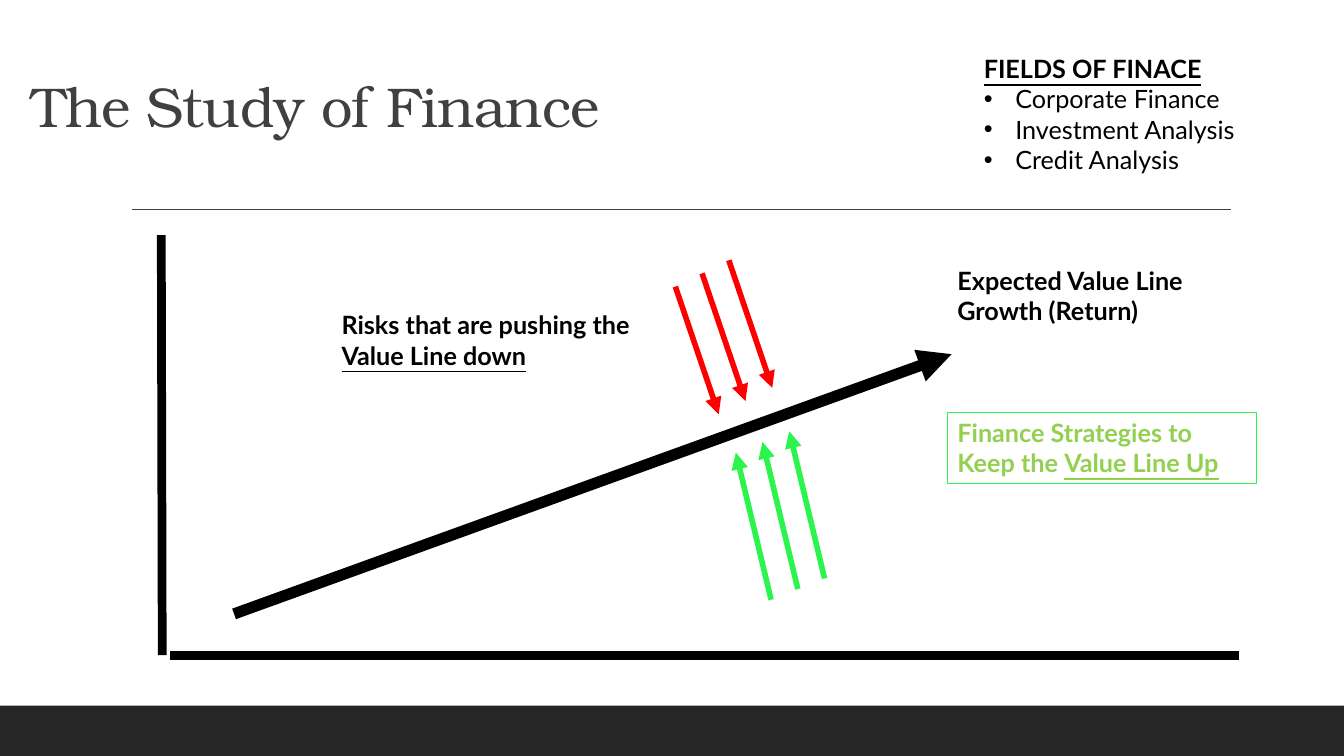
from lxml import etree
from pptx import Presentation
from pptx.dml.color import RGBColor
from pptx.enum.shapes import MSO_CONNECTOR, MSO_SHAPE
from pptx.enum.text import MSO_ANCHOR, MSO_AUTO_SIZE, PP_ALIGN
from pptx.oxml.ns import qn
from pptx.util import Pt

STRAIGHT = MSO_CONNECTOR.STRAIGHT
RECT = MSO_SHAPE.RECTANGLE
TOP, BOTTOM = MSO_ANCHOR.TOP, MSO_ANCHOR.BOTTOM
LEFT = PP_ALIGN.LEFT
NO_FIT = MSO_AUTO_SIZE.NONE

BLACK = RGBColor(0, 0, 0)
DARK = RGBColor(0x26, 0x26, 0x26)
GREY = RGBColor(0x40, 0x40, 0x40)
RED = RGBColor(0xFF, 0, 0)
GREEN = RGBColor(0x2B, 0xF5, 0x4D)
LIME = RGBColor(0x92, 0xD0, 0x50)

HEAD = {"name": "TeX Gyre Bonum", "size": Pt(40), "bold": False}
BODY = {"name": "Lato", "size": Pt(18), "bold": False}
BOLD = {**BODY, "bold": True}
UNDER = {**BOLD, "underline": True}
FRAME = {"word_wrap": True, "auto_size": NO_FIT, "vertical_anchor": TOP}


def apply(item, values):
    for name, value in values.items():
        setattr(item, name, value)


def place(shape, box):
    names = ("left", "top", "width", "height")
    apply(shape, {name: Pt(size) for name, size in zip(names, box)})


def add_run(para, text, style, color):
    run = para.add_run()
    run.text = text
    apply(run.font, style)
    run.font.color.rgb = color
    return run


def add_line(slide, start, end, color, width, arrow=False):
    line = slide.shapes.add_connector(STRAIGHT, *map(Pt, start + end))
    line.line.color.rgb = color
    line.line.width = Pt(width)
    if arrow:
        tail = etree.SubElement(line.line._get_or_add_ln(), qn("a:tailEnd"))
        tail.set("type", "triangle")
    etree.SubElement(line._element.spPr, qn("a:effectLst"))


def add_label(slide, box, parts, color, edge=None):
    label = slide.shapes.add_textbox(*map(Pt, box))
    apply(label.text_frame, FRAME)
    if edge:
        label.line.color.rgb = edge
        label.line.width = Pt(0.75)
    for text, style in parts:
        add_run(label.text_frame.paragraphs[0], text, style, color)


def add_base(slide, box):
    """Footer band and rule under the heading."""
    x, y, w, h = box
    band = slide.shapes.add_shape(RECT, Pt(x), Pt(y + h - 36), Pt(w), Pt(36))
    band.shadow.inherit = False
    band.fill.solid()
    band.fill.fore_color.rgb = DARK
    band.line.fill.background()
    add_line(slide, (x + 94.3, y + 149.5), (x + 879, y + 149.5), GREY, 1)


def add_title(slide, box):
    title = slide.shapes.title
    place(title, box)
    apply(title.text_frame, {**FRAME, "vertical_anchor": BOTTOM})
    para = title.text_frame.paragraphs[0]
    apply(para, {"alignment": LEFT, "line_spacing": 0.9})
    run = add_run(para, "The Study of Finance", HEAD, GREY)
    run.font._element.set("spc", "-50")


def add_fields(slide, box):
    """Underlined heading with a bulleted list."""
    body = slide.placeholders[1]
    place(body, box)
    frame = body.text_frame
    apply(frame, FRAME)
    rows = ("FIELDS OF FINACE", "Corporate Finance",
            "Investment Analysis", "Credit Analysis")
    for i, text in enumerate(rows):
        para = frame.add_paragraph() if i else frame.paragraphs[0]
        apply(para, {"alignment": LEFT, "space_before": Pt(0)})
        add_run(para, text, BODY if i else UNDER, BLACK)
        props = para._p.get_or_add_pPr()
        indent = Pt(22.5) if i else 0
        props.set("marL", str(indent))
        props.set("indent", str(-indent))
        if i:
            font = etree.SubElement(props, qn("a:buFont"))
            font.set("typeface", "Arial")
            etree.SubElement(props, qn("a:buChar")).set("char", "•")
        else:
            etree.SubElement(props, qn("a:buNone"))


def add_graph(slide, box):
    """Axes, value line, pressure arrows and labels."""
    x, y, w, h = box

    # Axes and value line
    add_line(slide, (x, y), (x + 0.7, y + h), BLACK, 6.25)
    add_line(slide, (x + w, y + h), (x + 6, y + h), BLACK, 6.25)
    add_line(slide, (x + 52, y + 270.5), (x + 564.5, y + 85), BLACK, 8, True)

    # Three arrows a side: start, step, reach
    sides = (
        (RED, (367.2, 36.7), (19.1, -9.4), (31, 91.2)),
        (GREEN, (435.6, 260.4), (19.1, -7.6), (-25.2, 105.1 * -1)),
    )
    for color, start, step, reach in sides:
        for i in range(3):
            sx = x + start[0] + i * step[0]
            sy = y + start[1] + i * step[1]
            end = (sx + reach[0], sy + reach[1])
            add_line(slide, (sx, sy), end, color, 4, True)

    # Labels
    add_label(slide, (x + 561.6, y + 18, 210, 51),
              [("Expected Value Line Growth (Return)", BOLD)], BLACK)
    add_label(slide, (x + 561.6, y + 126.5, 221, 51),
              [("Finance Strategies to Keep the ", BOLD),
               ("Value Line Up", UNDER)], LIME, GREEN)
    add_label(slide, (x + 121.7, y + 49.6, 232, 51),
              [("Risks that are pushing the ", BOLD),
               ("Value Line down", UNDER)], BLACK)


def main():
    deck = Presentation()
    deck.slide_width, deck.slide_height = Pt(960), Pt(540)
    slide = deck.slides.add_slide(deck.slide_layouts[1])
    add_base(slide, (0, 0, 960, 540))
    add_title(slide, (15, 66.2, 571, 37.5))
    add_fields(slide, (695.5, 34.6, 221, 116.6))
    add_graph(slide, (115.2, 168, 769.7, 300))
    deck.save("out.pptx")


if __name__ == "__main__":
    main()
